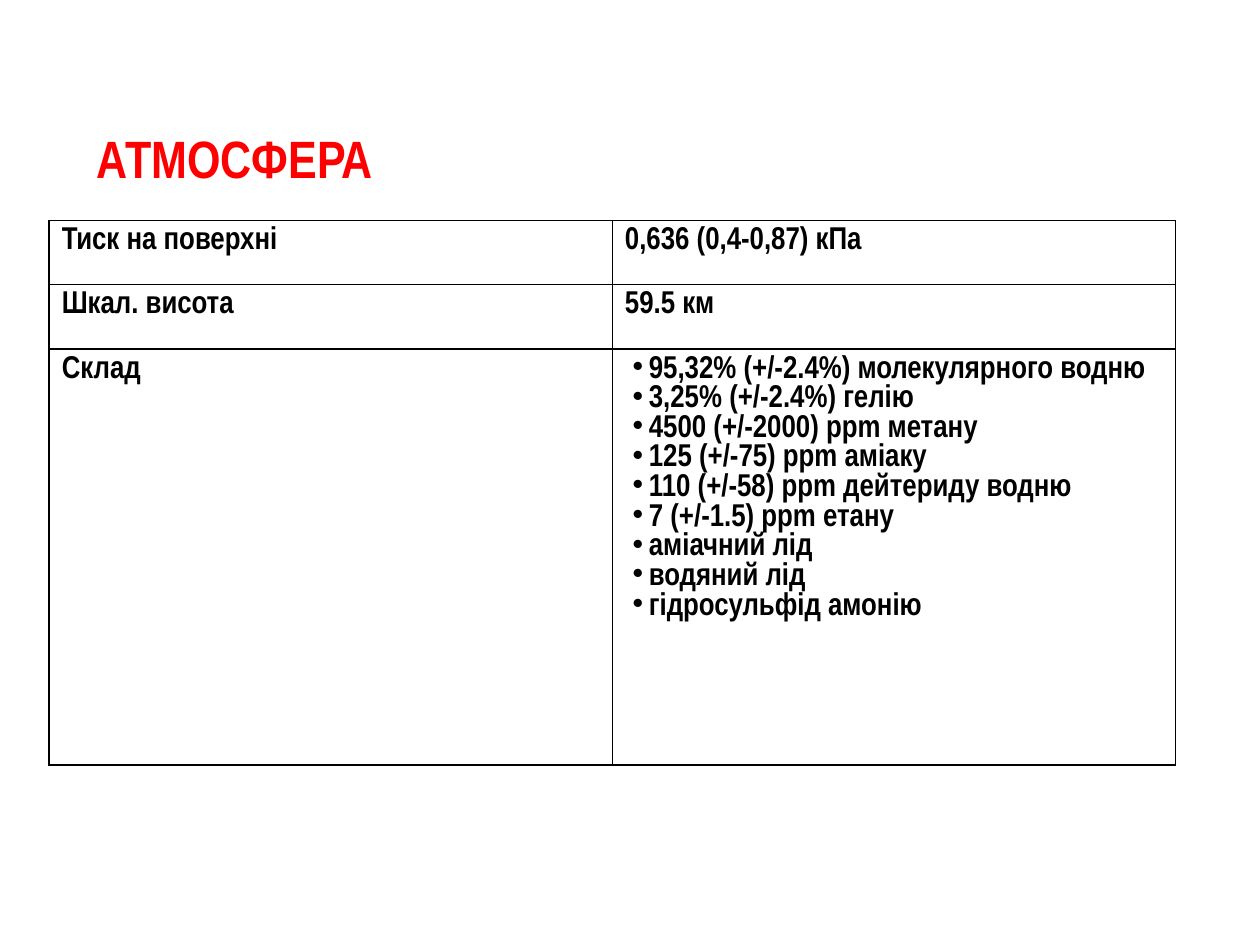
from lxml import etree
from pptx import Presentation
from pptx.dml.color import RGBColor
from pptx.enum import text
from pptx.oxml.ns import qn
from pptx.util import Inches, Pt

FONT = "Arial Narrow"
BLACK, RED = "000000", "FF0000"
COMPOSITION = [
    "95,32% (+/-2.4%) молекулярного водню",
    "3,25% (+/-2.4%) гелію",
    "4500 (+/-2000) ppm метану",
    "125 (+/-75) ppm аміаку",
    "110 (+/-58) ppm дейтериду водню",
    "7 (+/-1.5) ppm етану",
    "аміачний лід",
    "водяний лід",
    "гідросульфід амонію",
]
ROWS = [
    ("Тиск на поверхні", ["0,636 (0,4-0,87) кПа"]),
    ("Шкал. висота", ["59.5 км"]),
    ("Склад", COMPOSITION),
]
ROW_HEIGHTS = [0.51, 0.51, 3.3]
COLUMN_WIDTH = 4.47


def color(value):
    return RGBColor.from_string(value)


def add_span(para, words, size, ink):
    span = para.add_run()
    span.text = words
    span.font.name = FONT
    span.font.size = Pt(size)
    span.font.bold = True
    span.font.color.rgb = color(ink)


def add_bullet(para):
    properties = para._p.get_or_add_pPr()
    properties.set("marL", str(Inches(0.19)))
    properties.set("indent", str(Inches(-0.13)))
    etree.SubElement(properties, qn("a:buChar"), char="•")


def add_borders(cell):
    properties = cell._tc.get_or_add_tcPr()
    for position, side in enumerate(("lnL", "lnR", "lnT", "lnB")):
        line = etree.Element(qn(f"a:{side}"), w=str(Pt(1)))
        fill = etree.SubElement(line, qn("a:solidFill"))
        etree.SubElement(fill, qn("a:srgbClr"), val=BLACK)
        properties.insert(position, line)


def fill_cell(cell, lines):
    """Write the lines, with bullets when there are several."""
    cell.fill.background()
    add_borders(cell)
    frame = cell.text_frame
    for index, line in enumerate(lines):
        para = frame.add_paragraph() if index else frame.paragraphs[0]
        if len(lines) > 1:
            add_bullet(para)
        add_span(para, line, 18, BLACK)


def add_title(page, words):
    box = page.shapes.add_textbox(Inches(0.67), Inches(0.3), Inches(8.67), Inches(1.25))
    frame = box.text_frame
    frame.word_wrap = True
    frame.vertical_anchor = text.MSO_ANCHOR.BOTTOM
    add_span(frame.paragraphs[0], words, 30, RED)


def add_facts(page):
    table = page.shapes.add_table(
        len(ROWS), 2, Inches(0.39), Inches(1.75),
        Inches(2 * COLUMN_WIDTH), Inches(sum(ROW_HEIGHTS))).table
    table.first_row = False
    table.horz_banding = False
    for column in table.columns:
        column.width = Inches(COLUMN_WIDTH)
    for index, (label, values) in enumerate(ROWS):
        table.rows[index].height = Inches(ROW_HEIGHTS[index])
        fill_cell(table.cell(index, 0), [label])
        fill_cell(table.cell(index, 1), values)


def main():
    deck = Presentation()
    deck.slide_width, deck.slide_height = Inches(10), Inches(7.5)
    page = deck.slides.add_slide(deck.slide_layouts[6])
    add_title(page, "АТМОСФЕРА")
    add_facts(page)
    deck.save("out.pptx")


if __name__ == "__main__":
    main()
